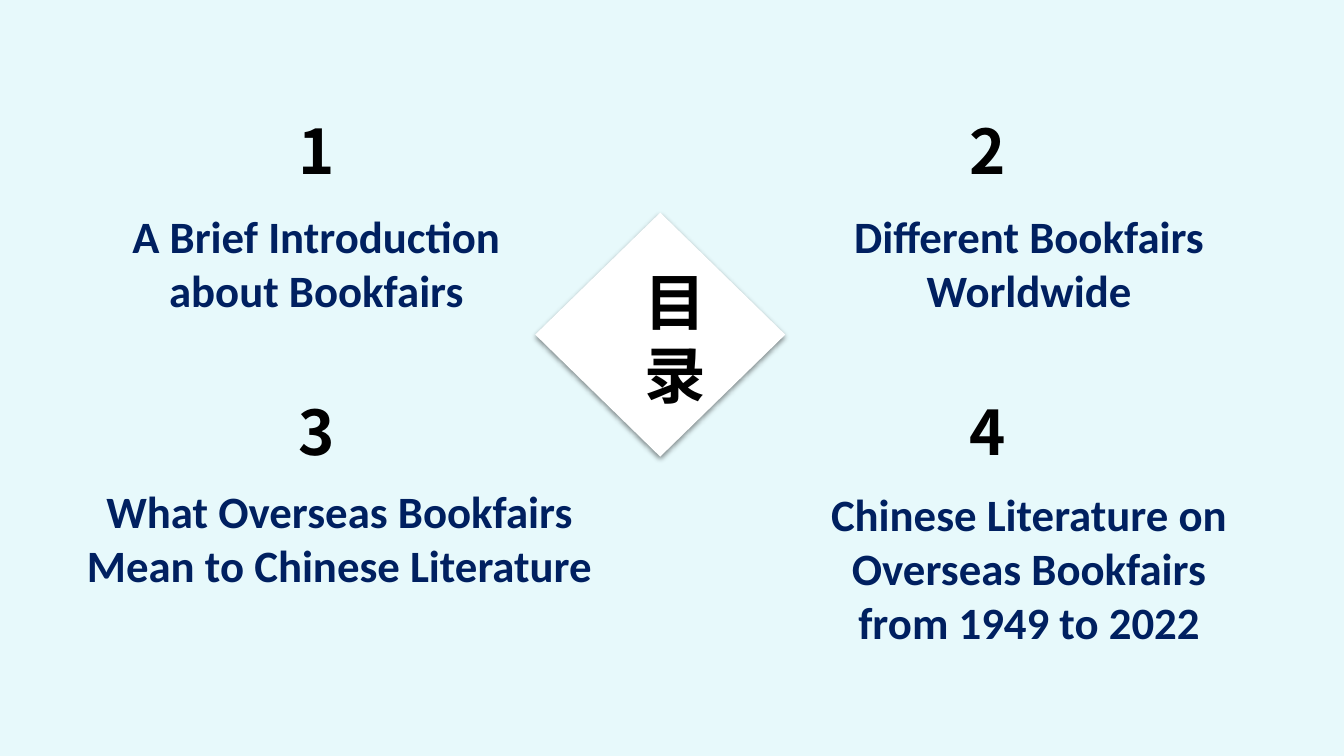
from dataclasses import dataclass
from itertools import product

from pptx import Presentation
from pptx import util as u
from pptx.dml.color import RGBColor
from pptx.enum import shapes, text
from pptx.oxml import parse_xml
from pptx.oxml.ns import nsdecls

CELL = u.Inches(0.1)
COLS, ROWS = 133.33, 75
SKY, WHITE, BLACK, NAVY = "E7F9FB", "FFFFFF", "000000", "002060"
HEADING = {"name": "Noto Sans CJK SC", "size": u.Pt(44), "bold": True}
CAPTION = {"name": "Calibri", "size": u.Pt(32), "bold": True}


@dataclass
class Box:
    """A place on the grid, in columns and rows."""
    col: float
    row: float
    cols: float
    rows: float

    def format(self) -> dict:
        """Return the box as shape position values."""
        names = ("left", "top", "width", "height")
        return {n: u.Emu(int(v * CELL)) for n, v in
                zip(names, (self.col, self.row, self.cols, self.rows))}


@dataclass
class Topic:
    """One entry of the contents and its place."""
    words: str
    box: Box


TOPICS = [
    Topic("A Brief Introduction about Bookfairs", Box(8.5, 20.2, 45.8, 11.8)),
    Topic("Different Bookfairs Worldwide", Box(77.5, 20.2, 49.2, 11.8)),
    Topic("What Overseas Bookfairs Mean to Chinese Literature", Box(7.2, 47.5, 53, 11.8)),
    Topic("Chinese Literature on Overseas Bookfairs from 1949 to 2022", Box(80, 47.8, 44.2, 17.2)),
]


def rgb(value: str) -> RGBColor:
    """Turn a hex string into a colour."""
    return RGBColor.from_string(value)


def apply(target, values: dict) -> None:
    """Set every attribute named in values."""
    for name, value in values.items():
        setattr(target, name, value)


def add_panel(s, kind, box: Box, color: str, depth: int):
    """Add a plain filled shape at a given depth of the slide."""
    sp = s.shapes.add_shape(kind, **box.format())
    sp.shadow.inherit = False
    sp.fill.solid()
    sp.fill.fore_color.rgb = rgb(color)
    sp.line.fill.background()
    s.shapes.element.insert(2 + depth, sp.element)
    return sp


def add_shadow(sp) -> None:
    """Give a shape a soft shadow below it."""
    effects = sp.element.spPr.find("{*}effectLst")
    effects.append(parse_xml(
        f'<a:outerShdw {nsdecls("a")} blurRad="{u.Pt(4)}" dist="{u.Pt(2)}" '
        f'dir="5400000" algn="ctr" rotWithShape="0"><a:srgbClr val="{BLACK}">'
        '<a:alpha val="43000"/></a:srgbClr></a:outerShdw>'))


def write(sp, words: str, box: Box, font: dict, color: str, spacing, top: float) -> None:
    """Place a text shape and fill it with one centred paragraph."""
    apply(sp, box.format())
    tf = sp.text_frame
    apply(tf, {"text": words, "word_wrap": True, "auto_size": text.MSO_AUTO_SIZE.NONE,
               "vertical_anchor": text.MSO_ANCHOR.TOP, "margin_left": CELL,
               "margin_right": CELL, "margin_top": u.Inches(top), "margin_bottom": 0})
    p = tf.paragraphs[0]
    apply(p, {"alignment": text.PP_ALIGN.CENTER, "line_spacing": spacing,
              "space_before": u.Pt(0), "space_after": u.Pt(0)})
    pPr = p._p.get_or_add_pPr()
    pPr.set("marL", "0")
    pPr.set("indent", "0")
    pPr.append(parse_xml(f'<a:buNone {nsdecls("a")}/>'))
    r = p.runs[0]
    apply(r.font, font)
    r.font.color.rgb = rgb(color)
    r.font._element.find("{*}latin").addnext(
        parse_xml(f'<a:ea {nsdecls("a")} typeface="{font["name"]}"/>'))


def write_heading(sp, words: str, box: Box) -> None:
    """Write large black text with an even line pitch."""
    write(sp, words, box, HEADING, BLACK, u.Pt(52), 0.11)


def main() -> None:
    """Build the contents slide."""
    prs = Presentation()
    apply(prs, {"slide_width": int(COLS * CELL), "slide_height": ROWS * CELL})
    s = prs.slides.add_slide(prs.slide_layouts.get_by_name("Comparison"))
    title, *bodies = list(s.placeholders)[:5]

    add_panel(s, shapes.MSO_SHAPE.RECTANGLE, Box(0, 0, COLS, ROWS), SKY, 0)
    diamond = add_panel(s, shapes.MSO_SHAPE.DIAMOND, Box(53.1, 21.1, 24.8, 24.2), WHITE, 1)
    add_shadow(diamond)
    write_heading(title, "目录", Box(62.9, 25.2, 5.1, 15.8))

    for number, (row, col) in enumerate(product((10.2, 38.1), (24.5, 91.1)), 1):
        box = Box(col, row, 13.8, 8.4)
        write_heading(s.shapes.add_textbox(**box.format()), str(number), box)
    for sp, topic in zip(bodies, TOPICS):
        write(sp, topic.words, topic.box, CAPTION, NAVY, 1.0, 0.05)

    prs.save("out.pptx")


if __name__ == "__main__":
    main()
